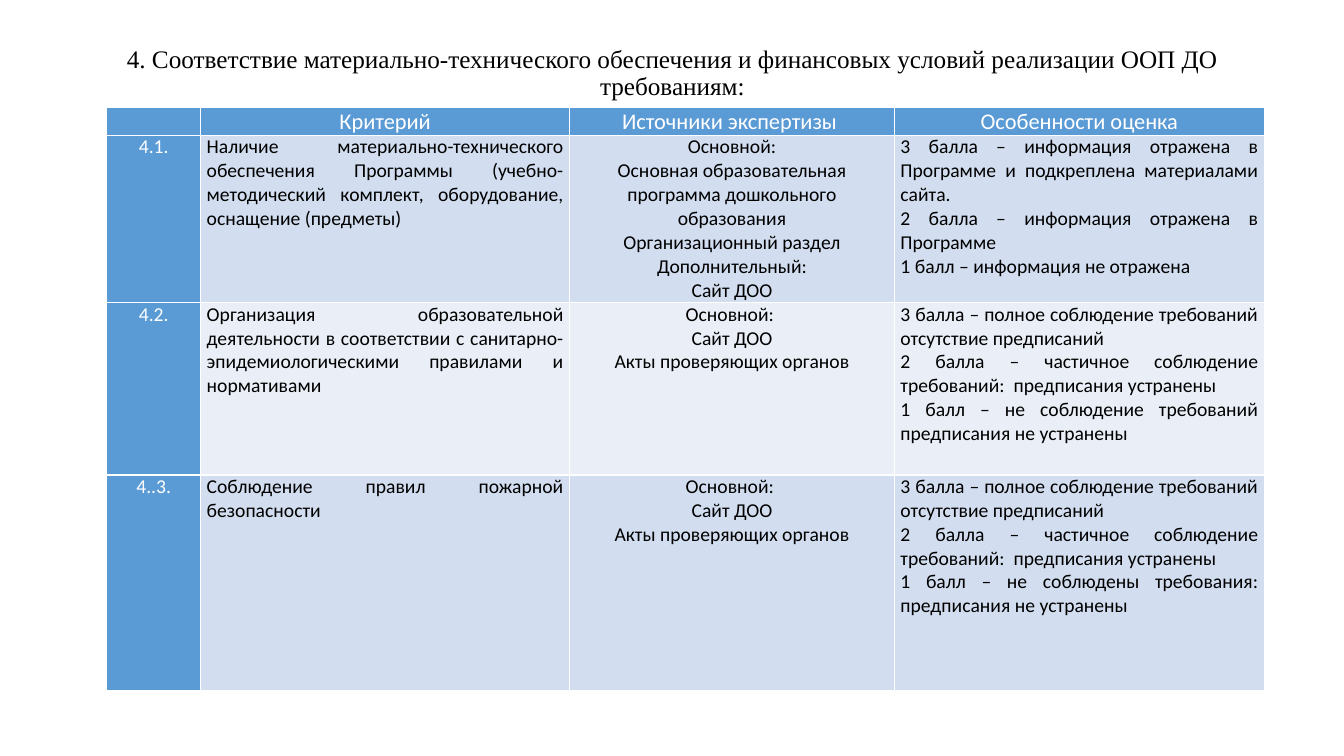
from lxml import etree
from pptx import Presentation
from pptx import util as u
from pptx.dml.color import RGBColor
from pptx.enum import text
from pptx.oxml import ns

SLIDE_W, SLIDE_H = u.Inches(13.33), u.Inches(7.5)
COLORS = {"ink": "000000", "paper": "FFFFFF", "accent": "5B9BD5",
          "odd": "D2DEEF", "even": "EAEFF7"}
CENTER, JUSTIFY = text.PP_ALIGN.CENTER, text.PP_ALIGN.JUSTIFY

# Percent of the slide's width and height
TITLE_BOX = (6.9, 5.33, 86.27, 8.93)
TABLE_CORNER = (7.95, 14.27)
COLUMN_SHARES = (6.98, 27.46, 24.16, 27.53)
ROW_SHARES = (3.47, 22.13, 22.8, 28.53)
COLUMN_ALIGNS = (CENTER, JUSTIFY, CENTER, JUSTIFY)

TITLE = ("4. Соответствие материально-технического обеспечения "
         "и финансовых условий реализации ООП ДО требованиям:")
HEADINGS = ["", "Критерий", "Источники экспертизы ", "Особенности оценка"]
SITE_AND_ACTS = ["Основной: ", "Сайт ДОО", "Акты проверяющих органов"]
COMPLIANCE_SCORES = [
    "3 балла – полное соблюдение требований отсутствие предписаний",
    "2 балла – частичное соблюдение требований:  предписания устранены",
]
CRITERIA = [
    (["4.1."],
     ["Наличие материально-технического обеспечения Программы "
      "(учебно-методический комплект, оборудование, оснащение (предметы)"],
     ["Основной:",
      "Основная образовательная программа дошкольного образования",
      "Организационный раздел", "Дополнительный:", "Сайт ДОО"],
     ["3 балла – информация отражена в Программе и подкреплена материалами сайта.",
      "2 балла – информация отражена в Программе ",
      "1 балл – информация не отражена"]),
    (["4.2."],
     ["Организация образовательной деятельности в соответствии "
      "с санитарно-эпидемиологическими правилами и нормативами"],
     SITE_AND_ACTS,
     COMPLIANCE_SCORES
     + ["1 балл – не соблюдение требований предписания не устранены"]),
    (["4..3."],
     ["Соблюдение правил пожарной безопасности"],
     SITE_AND_ACTS,
     COMPLIANCE_SCORES
     + ["1 балл – не соблюдены требования: предписания не устранены"]),
]


def across(percent):
    return u.Emu(round(SLIDE_W * percent / 100))


def down(percent):
    return u.Emu(round(SLIDE_H * percent / 100))


def rgb(color):
    return RGBColor.from_string(COLORS[color])


def add_run(paragraph, words, size, font, color):
    run = paragraph.add_run()
    run.text = words
    run.font.size = u.Pt(size)
    run.font.name = font
    run.font.bold = False
    run.font.color.rgb = rgb(color)


def write_title(title):
    left, top, width, height = TITLE_BOX
    title.left, title.top = across(left), down(top)
    title.width, title.height = across(width), down(height)
    frame = title.text_frame
    frame.word_wrap = True
    frame.auto_size = text.MSO_AUTO_SIZE.NONE
    frame.vertical_anchor = text.MSO_ANCHOR.MIDDLE
    heading = frame.paragraphs[0]
    heading.alignment = CENTER
    heading.line_spacing = 0.9
    add_run(heading, TITLE, 18, "Times New Roman", "ink")


def outline_cell(cell):
    properties = cell._tc.get_or_add_tcPr()
    for side in ("lnL", "lnR", "lnT", "lnB"):
        line = etree.SubElement(properties, ns.qn(f"a:{side}"), w=str(u.Pt(1)))
        fill = etree.SubElement(line, ns.qn("a:solidFill"))
        etree.SubElement(fill, ns.qn("a:srgbClr"), val=COLORS["paper"])


def fill_cell(cell, lines, align, size, ink, background):
    outline_cell(cell)
    cell.fill.solid()
    cell.fill.fore_color.rgb = rgb(background)
    cell.margin_left = cell.margin_right = u.Inches(0.06)
    cell.margin_top = cell.margin_bottom = 0
    for number, words in enumerate(lines):
        frame = cell.text_frame
        paragraph = frame.add_paragraph() if number else frame.paragraphs[0]
        paragraph.alignment = align
        if words:
            add_run(paragraph, words, size, "Calibri", ink)
        else:
            # Keeps an empty cell from stretching its row
            etree.SubElement(paragraph._p, ns.qn("a:endParaRPr"),
                             sz=str(size * 100))


def add_criteria_table(slide):
    left, top = TABLE_CORNER
    table = slide.shapes.add_table(
        len(ROW_SHARES), len(COLUMN_SHARES), across(left), down(top),
        across(sum(COLUMN_SHARES)), down(sum(ROW_SHARES))).table
    table.horz_banding = False
    for column, share in zip(table.columns, COLUMN_SHARES):
        column.width = across(share)
    for row, share in zip(table.rows, ROW_SHARES):
        row.height = down(share)

    for column, heading in enumerate(HEADINGS):
        fill_cell(table.cell(0, column), [heading], CENTER, 16, "paper", "accent")
    for row, criterion in enumerate(CRITERIA, start=1):
        band = "odd" if row % 2 else "even"
        for column, lines in enumerate(criterion):
            ink, background = (("ink", band) if column else ("paper", "accent"))
            fill_cell(table.cell(row, column), lines, COLUMN_ALIGNS[column],
                      14, ink, background)


def main():
    deck = Presentation()
    deck.slide_width, deck.slide_height = SLIDE_W, SLIDE_H
    slide = deck.slides.add_slide(deck.slide_layouts.get_by_name("Title Only"))
    write_title(slide.shapes.title)
    add_criteria_table(slide)
    deck.save("out.pptx")


if __name__ == "__main__":
    main()
